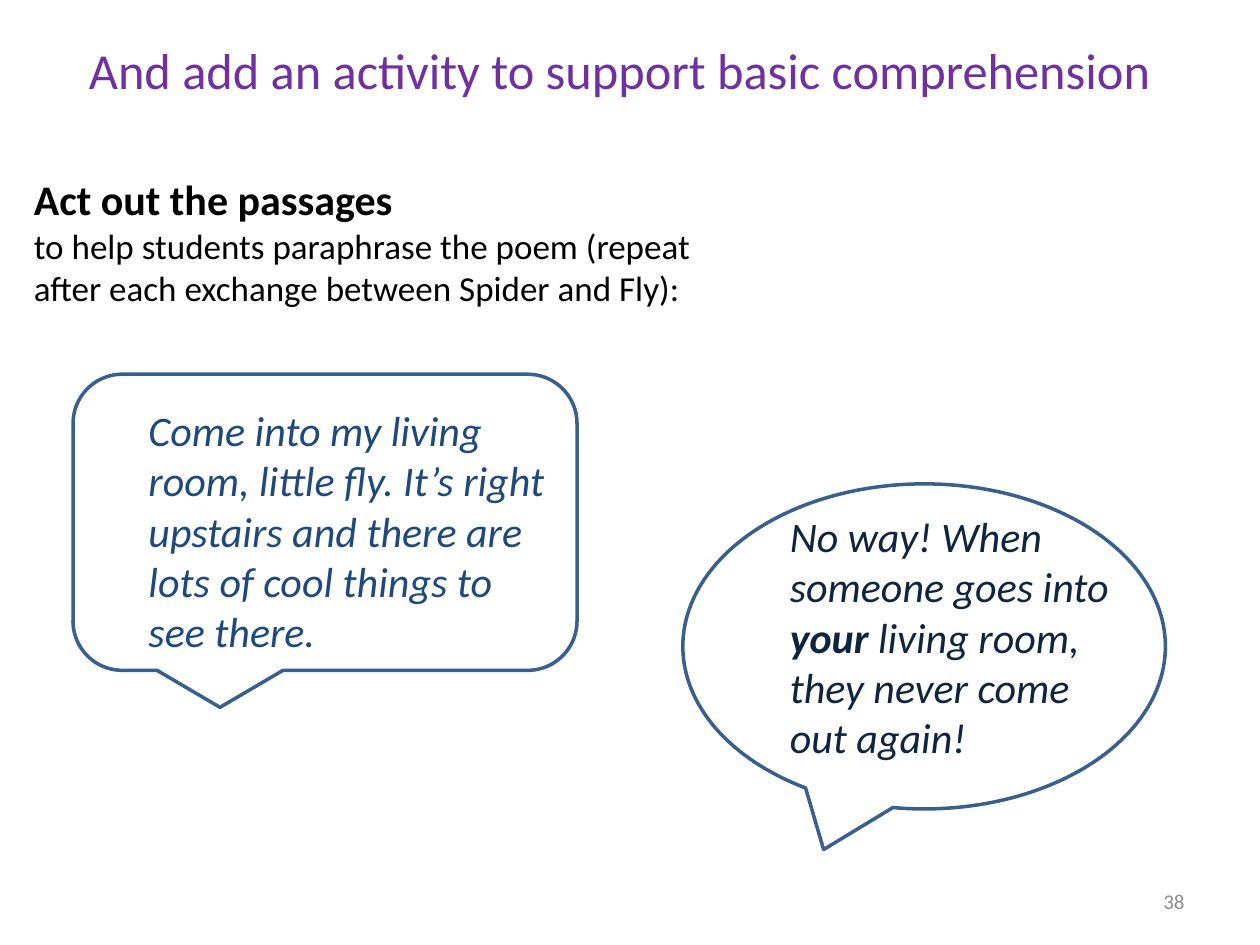
"""Builds the slide on acting out the passages of a poem."""
from dataclasses import dataclass

from pptx import Presentation
from pptx.dml.color import RGBColor
from pptx.enum.shapes import MSO_SHAPE
from pptx.enum.text import MSO_ANCHOR, MSO_AUTO_SIZE, PP_ALIGN
from pptx.util import Inches, Pt

ROUND_BUBBLE = MSO_SHAPE.ROUNDED_RECTANGULAR_CALLOUT
OVAL_BUBBLE = MSO_SHAPE.OVAL_CALLOUT
TOP, MIDDLE = MSO_ANCHOR.TOP, MSO_ANCHOR.MIDDLE
LEFT, CENTER, RIGHT = PP_ALIGN.LEFT, PP_ALIGN.CENTER, PP_ALIGN.RIGHT
NO_AUTO_SIZE = MSO_AUTO_SIZE.NONE
TITLE_ONLY_LAYOUT = 5


@dataclass(frozen=True)
class Theme:
    """Holds the colours and type sizes of the slide."""
    font: str = "Calibri"
    title: str = "7030A0"
    body: str = "000000"
    spider: str = "1F497D"
    fly: str = "0F243E"
    outline: str = "3A5F8C"
    muted: str = "8C8C8C"
    title_size: float = 28.8
    large_size: float = 24
    body_size: float = 20
    small_size: float = 12
    outline_width: float = 2


def add_text(paragraph, text, *, font, size, color, bold=False, italic=False):
    """Adds one formatted run to a paragraph."""
    run = paragraph.add_run()
    run.text = text
    run.font.name = font
    run.font.size = Pt(size)
    run.font.color.rgb = RGBColor.from_string(color)
    run.font.bold = bold
    run.font.italic = italic


class SlideBuilder:
    """Adds styled elements to the current slide."""

    def __init__(self, slide, theme):
        """Keeps the slide and its theme."""
        self.slide = slide
        self.theme = theme

    def fill_text(self, shape, paragraphs, alignment=LEFT, anchor=TOP):
        """Fills a shape with paragraphs, each a list of (text, format) pairs."""
        frame = shape.text_frame
        frame.word_wrap = True
        frame.auto_size = NO_AUTO_SIZE
        frame.vertical_anchor = anchor
        for index, runs in enumerate(paragraphs):
            paragraph = frame.add_paragraph() if index else frame.paragraphs[0]
            paragraph.alignment = alignment
            for text, style in runs:
                add_text(paragraph, text, font=self.theme.font, **style)

    def title(self, text, left, top, width, height):
        """Places the title in the upper part of its placeholder."""
        shape = self.slide.shapes.title
        shape.left, shape.top = Inches(left), Inches(top)
        shape.width, shape.height = Inches(width), Inches(height)
        style = {"size": self.theme.title_size, "color": self.theme.title}
        self.fill_text(shape, [[(text, style)]], CENTER, MIDDLE)
        shape.text_frame.margin_bottom = Inches(0.54)

    def text_box(self, paragraphs, left, top, width, height, **layout):
        """Adds a wrapped text box."""
        shape = self.slide.shapes.add_textbox(
            Inches(left), Inches(top), Inches(width), Inches(height))
        self.fill_text(shape, paragraphs, **layout)

    def bubble(self, kind, left, top, width, height):
        """Adds an outlined speech bubble."""
        shape = self.slide.shapes.add_shape(
            kind, Inches(left), Inches(top), Inches(width), Inches(height))
        shape.shadow.inherit = False
        shape.fill.background()
        shape.line.color.rgb = RGBColor.from_string(self.theme.outline)
        shape.line.width = Pt(self.theme.outline_width)


def main():
    """Builds and saves the presentation."""
    theme = Theme()
    presentation = Presentation()
    presentation.slide_width, presentation.slide_height = Inches(10), Inches(7.5)
    layout = presentation.slide_layouts[TITLE_ONLY_LAYOUT]
    builder = SlideBuilder(presentation.slides.add_slide(layout), theme)

    heading = {"size": theme.large_size, "color": theme.body, "bold": True}
    body = {"size": theme.body_size, "color": theme.body}
    spider = {"size": theme.large_size, "color": theme.spider, "italic": True}
    fly = {"size": theme.large_size, "color": theme.fly, "italic": True}
    number = {"size": theme.small_size, "color": theme.muted}

    builder.title("And add an activity to support basic comprehension",
                  0.42, -0.04, 9, 1.67)
    builder.text_box([
        [("Act out the passages", heading)],
        [("to help students paraphrase the poem (repeat after each exchange "
          "between Spider and Fly):", body)],
    ], 0.17, 1.33, 5.49, 1.82)
    builder.bubble(OVAL_BUBBLE, 5.42, 3.84, 3.83, 2.58)
    builder.bubble(ROUND_BUBBLE, 0.58, 2.97, 4, 2.35)
    builder.text_box([[
        ("Come into my living room, little fly. It’s right upstairs and there "
         "are lots of cool things to see there.", spider),
    ]], 1.08, 3.16, 3.42, 2.42)
    builder.text_box([[
        ("No way! When someone goes into ", fly),
        ("your", {**fly, "bold": True}),
        (" living room, they never come out again!", fly),
    ]], 6.17, 4, 2.83, 2.42)
    builder.text_box([[("38", number)]], 7.17, 6.95, 2.33, 0.4,
                     alignment=RIGHT, anchor=MIDDLE)
    presentation.save("out.pptx")


if __name__ == "__main__":
    main()
